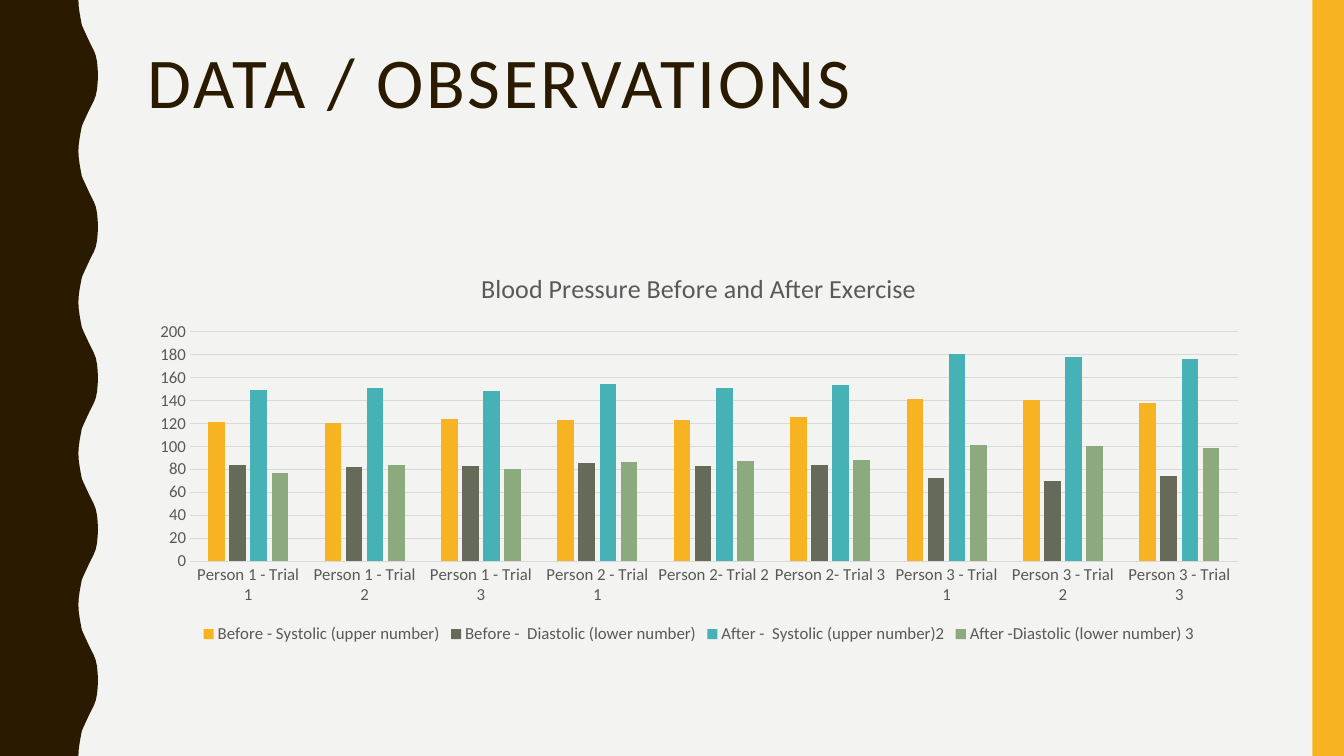
from pptx import Presentation
from pptx.chart.data import CategoryChartData
from pptx.dml.color import RGBColor
from pptx.enum.chart import XL_CHART_TYPE, XL_LEGEND_POSITION, XL_TICK_MARK
from pptx.enum.shapes import MSO_SHAPE
from pptx.enum.text import MSO_ANCHOR, PP_ALIGN
from pptx.util import Pt

COLUMNS = XL_CHART_TYPE.COLUMN_CLUSTERED
BOTTOM = XL_LEGEND_POSITION.BOTTOM
NO_TICK = XL_TICK_MARK.NONE
RECT = MSO_SHAPE.RECTANGLE
TOP = MSO_ANCHOR.TOP
LEFT, CENTER = PP_ALIGN.LEFT, PP_ALIGN.CENTER

PAPER = RGBColor(0xF3, 0xF3, 0xF2)
BROWN = RGBColor(0x2A, 0x1A, 0x00)
GOLD = RGBColor(0xF8, 0xB3, 0x23)
OLIVE = RGBColor(0x65, 0x6A, 0x59)
TEAL = RGBColor(0x46, 0xB2, 0xB5)
SAGE = RGBColor(0x8C, 0xAA, 0x7E)
GRAY = RGBColor(0x59, 0x59, 0x59)
RULE = RGBColor(0xD9, 0xD9, 0xD9)

FONT = "Calibri"
WIDTH, HEIGHT = 960, 540
WAVES = 5
# Half a wave of the left edge, from trough to crest
HALF = [(56, 0), (56.3, 5), (57, 10), (57.8, 14.4), (58.5, 18),
        (59.8, 21), (61.2, 24), (62.6, 27), (64, 30), (65.5, 33),
        (67, 36), (68.4, 39.6), (69.3, 44), (69.8, 49), (70, 54)]

TRIALS = ["Person 1 - Trial 1", "Person 1 - Trial 2", "Person 1 - Trial 3",
          "Person 2 - Trial 1", "Person 2- Trial 2", "Person 2- Trial 3",
          "Person 3 - Trial 1", "Person 3 - Trial 2", "Person 3 - Trial 3"]
SERIES = [
    ("Before - Systolic (upper number)", GOLD,
     [121, 120, 124, 123, 123, 125, 141, 140, 138]),
    ("Before -  Diastolic (lower number)", OLIVE,
     [84, 82, 83, 85, 83, 84, 72, 70, 74]),
    ("After -  Systolic (upper number)2", TEAL,
     [149, 151, 148, 154, 151, 153, 180, 178, 176]),
    ("After -Diastolic (lower number) 3", SAGE,
     [77, 84, 80, 86, 87, 88, 101, 100, 98]),
]


def style(font, size, color):
    font.name = FONT
    font.size = Pt(size)
    font.bold = False
    font.color.rgb = color


def write(frame, text, size=12, color=GRAY, align=LEFT, line=1.0, track=0):
    """Put one formatted line in a text frame; track is letter spacing."""
    para = frame.paragraphs[0]
    para.alignment = align
    para.line_spacing = line
    run = para.add_run()
    run.text = text
    style(run.font, size, color)
    if track:
        run.font._element.set("spc", str(track * 100))


def paint(shape, color):
    shape.shadow.inherit = False
    shape.fill.solid()
    shape.fill.fore_color.rgb = color
    shape.line.fill.background()


def add_wave(slide):
    period = HEIGHT / WAVES
    wave = HALF + [(x, period - y) for x, y in HALF[-2::-1]]
    edge = [(x, y + i * period) for i in range(WAVES) for x, y in wave]
    path = slide.shapes.build_freeform(0, 0, scale=Pt(1) / 100)
    points = edge + [(0, HEIGHT)]
    path.add_line_segments(
        [(round(x * 100), round(y * 100)) for x, y in points], close=True)
    paint(path.convert_to_shape(), BROWN)


def add_bar(slide):
    bar = slide.shapes.add_shape(RECT, Pt(937.5), 0, Pt(22.5), Pt(HEIGHT))
    paint(bar, GOLD)


def add_title(slide, text):
    box = slide.shapes.add_textbox(Pt(98.6), Pt(30.2), Pt(801.4), Pt(117.4))
    frame = box.text_frame
    frame.word_wrap = True
    frame.vertical_anchor = TOP
    write(frame, text, size=51, color=BROWN, line=0.9, track=2)


def set_axis(axis):
    axis.major_tick_mark = axis.minor_tick_mark = NO_TICK
    style(axis.tick_labels.font, 12, GRAY)


def set_line(line):
    line.color.rgb = RULE
    line.width = Pt(0.75)


def add_chart(slide, title):
    data = CategoryChartData()
    data.categories = TRIALS
    for name, _, values in SERIES:
        data.add_series(name, values)
    chart = slide.shapes.add_chart(
        COLUMNS, Pt(98.6), Pt(180), Pt(801.4), Pt(283), data).chart
    style(chart.font, 12, GRAY)
    chart.has_title = True
    write(chart.chart_title.text_frame, title, size=18.6, align=CENTER)
    chart.chart_title.include_in_layout = False

    chart.has_legend = True
    chart.legend.position = BOTTOM
    chart.legend.include_in_layout = False
    style(chart.legend.font, 12, GRAY)

    set_axis(chart.category_axis)
    set_line(chart.category_axis.format.line)
    value = chart.value_axis
    set_axis(value)
    value.minimum_scale, value.maximum_scale = 0, 200
    value.major_unit = 20
    value.format.line.fill.background()
    set_line(value.major_gridlines.format.line)

    plot = chart.plots[0]
    plot.gap_width = 219
    plot.overlap = -27
    plot.vary_by_categories = False
    for series, (_, color, _) in zip(plot.series, SERIES):
        series.format.fill.solid()
        series.format.fill.fore_color.rgb = color


def main():
    deck = Presentation()
    deck.slide_width, deck.slide_height = Pt(WIDTH), Pt(HEIGHT)
    slide = deck.slides.add_slide(deck.slide_layouts[6])
    slide.background.fill.solid()
    slide.background.fill.fore_color.rgb = PAPER
    add_wave(slide)
    add_bar(slide)
    add_title(slide, "DATA / OBSERVATIONS")
    add_chart(slide, "Blood Pressure Before and After Exercise")
    deck.save("out.pptx")


if __name__ == "__main__":
    main()
